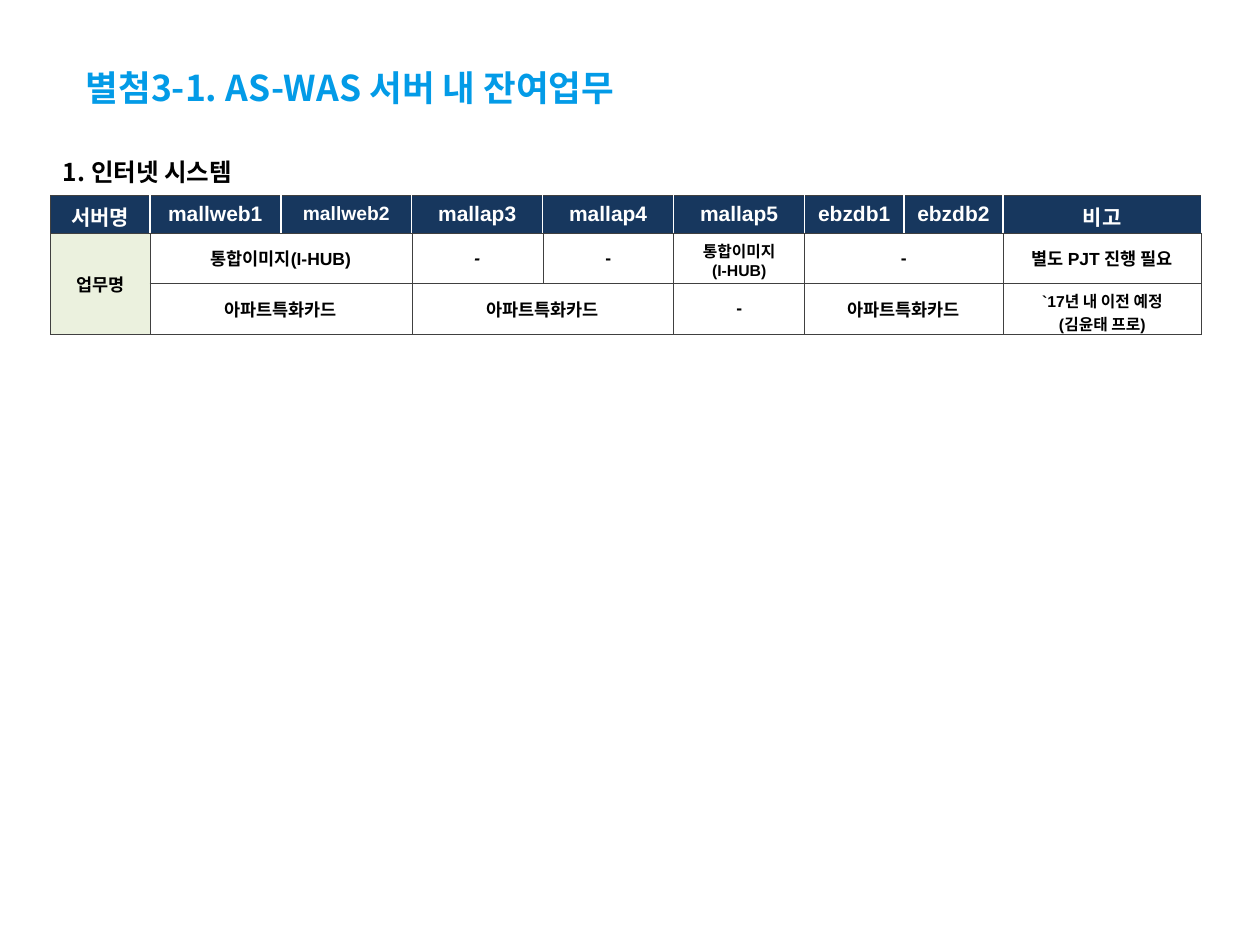
from lxml.etree import SubElement
from pptx import Presentation
from pptx.dml.color import RGBColor
from pptx.enum.text import MSO_ANCHOR, PP_ALIGN
from pptx.oxml import parse_xml
from pptx.oxml.ns import nsdecls, qn
from pptx.util import Cm, Pt

KOREAN_FONT = "Noto Sans CJK KR"
NAVY, GREEN, WHITE, BLACK = "17375E", "EBF1DE", "FFFFFF", "000000"
GRAY, BLUE = "404040", "039BE7"

COLUMN_WIDTHS = [2] + [2.64] * 5 + [2, 2, 4]
ROW_HEIGHTS = [0.66, 0.84, 0.84]
HEADERS = ["서버명", "mallweb1", "mallweb2", "mallap3", "mallap4", "mallap5",
           "ebzdb1", "ebzdb2", "비고"]
# row, column, rows spanned, columns spanned, text, format
BODY = [
    (1, 0, 2, 1, "업무명", {}),
    (1, 1, 1, 2, "통합이미지(I-HUB)", {}),
    (1, 3, 1, 1, "-", {"italic": True}),
    (1, 4, 1, 1, "-", {}),
    (1, 5, 1, 1, "통합이미지\n(I-HUB)", {"size": 9}),
    (1, 6, 1, 2, "-", {}),
    (1, 8, 1, 1, "별도 PJT 진행 필요", {}),
    (2, 1, 1, 2, "아파트특화카드", {}),
    (2, 3, 1, 2, "아파트특화카드", {}),
    (2, 5, 1, 1, "-", {}),
    (2, 6, 1, 2, "아파트특화카드", {}),
    (2, 8, 1, 1, "`17년 내 이전 예정\n(김윤태 프로)", {"size": 9}),
]


def color(value):
    return RGBColor.from_string(value)


def write(frame, text, size=10, font="Arial", fill=BLACK, italic=False,
          align=PP_ALIGN.LEFT, line_spacing=None):
    """Fill a text frame with bold text, one paragraph for each line."""
    for index, line in enumerate(text.split("\n")):
        para = frame.add_paragraph() if index else frame.paragraphs[0]
        para.alignment = align
        para.line_spacing = line_spacing
        span = para.add_run()
        span.text = line
        span.font.size = Pt(size)
        span.font.name = font
        span.font.bold = True
        span.font.italic = italic
        span.font.color.rgb = color(fill)
        SubElement(span.font._element, qn("a:ea"), typeface=KOREAN_FONT)


def add_text(page, left, top, width, height, text,
             anchor=MSO_ANCHOR.TOP, inset=0.25, **text_format):
    box = page.shapes.add_textbox(Cm(left), Cm(top), Cm(width), Cm(height))
    frame = box.text_frame
    frame.word_wrap = True
    frame.vertical_anchor = anchor
    frame.margin_left = Cm(inset)
    write(frame, text, **text_format)


def set_borders(cell, **sides):
    """Draw each side (L, R, T, B) with its (colour, points)."""
    properties = cell._tc.get_or_add_tcPr()
    for index, side in enumerate("LRTB"):
        value, points = sides[side]
        properties.insert(index, parse_xml(
            f'<a:ln{side} {nsdecls("a")} w="{Pt(points)}"><a:solidFill>'
            f'<a:srgbClr val="{value}"/></a:solidFill></a:ln{side}>'))


def style_cell(cell, row, column):
    thin, divider = (GRAY, 0.25), (WHITE, 1)
    header = row == 0
    cell.vertical_anchor = MSO_ANCHOR.MIDDLE
    if header or column == 0:
        cell.fill.solid()
        cell.fill.fore_color.rgb = color(NAVY if header else GREEN)
    else:
        cell.fill.background()
    set_borders(cell, L=divider if header and column else thin,
                R=divider if header else thin, T=thin, B=thin)


def add_server_table(page, left, top):
    table = page.shapes.add_table(
        len(ROW_HEIGHTS), len(COLUMN_WIDTHS), Cm(left), Cm(top),
        Cm(sum(COLUMN_WIDTHS)), Cm(sum(ROW_HEIGHTS))).table
    table.horz_banding = False
    for column, width in zip(table.columns, COLUMN_WIDTHS):
        column.width = Cm(width)
    for row, height in enumerate(ROW_HEIGHTS):
        table.rows[row].height = Cm(height)
        for column in range(len(COLUMN_WIDTHS)):
            style_cell(table.cell(row, column), row, column)
    for column, name in enumerate(HEADERS):
        write(table.cell(0, column).text_frame, name, fill=WHITE,
              size=11 if name == "mallweb2" else 12, align=PP_ALIGN.CENTER)
    for row, column, down, across, text, text_format in BODY:
        cell = table.cell(row, column)
        if down * across > 1:
            cell.merge(table.cell(row + down - 1, column + across - 1))
        write(cell.text_frame, text, align=PP_ALIGN.CENTER, **text_format)
    label = table.cell(1, 0)
    label.margin_left = label.margin_right = label.margin_top = Cm(0.03)
    label.margin_bottom = 0


def main():
    deck = Presentation()
    deck.slide_width, deck.slide_height = Cm(25.4), Cm(19.05)
    page = deck.slides.add_slide(deck.slide_layouts[6])
    add_text(page, 1.73, 1.17, 21.44, 1.19, "별첨3-1. AS-WAS 서버 내 잔여업무",
             anchor=MSO_ANCHOR.MIDDLE, inset=0, size=20.3,
             font=KOREAN_FONT, fill=BLUE)
    add_server_table(page, 1.02, 3.93)
    add_text(page, 1.02, 2.95, 6.27, 0.99, "1. 인터넷 시스템", size=14,
             font=KOREAN_FONT, line_spacing=1.15)
    deck.save("out.pptx")


if __name__ == "__main__":
    main()
